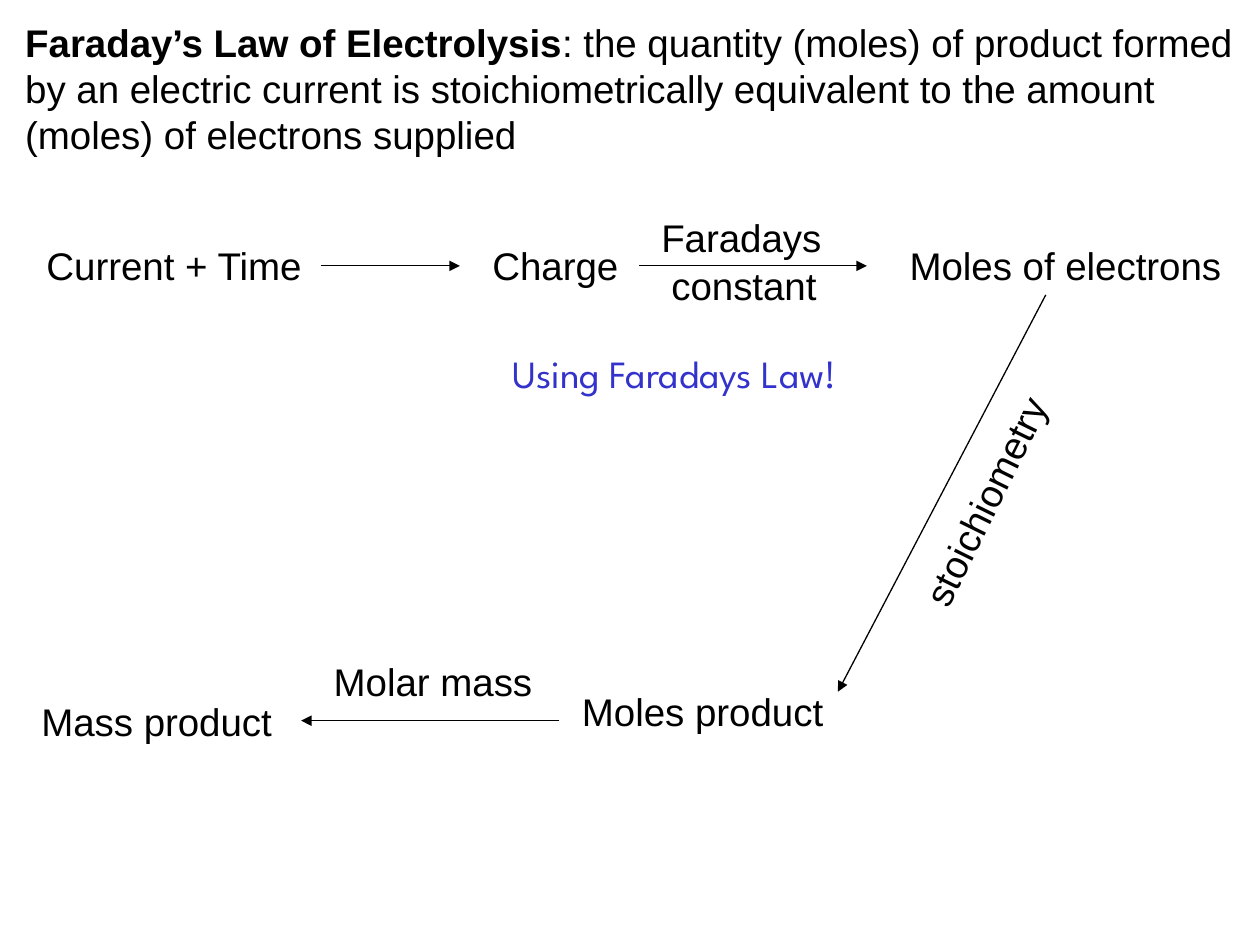
from lxml import etree
from pptx import Presentation
from pptx.dml.color import RGBColor
from pptx.enum.shapes import MSO_CONNECTOR
from pptx.enum.text import MSO_ANCHOR, MSO_AUTO_SIZE, PP_ALIGN
from pptx.oxml.ns import qn
from pptx.util import Inches, Pt

STRAIGHT = MSO_CONNECTOR.STRAIGHT
TOP = MSO_ANCHOR.TOP
LEFT = PP_ALIGN.LEFT
NO_FIT = MSO_AUTO_SIZE.NONE
COLORS = {"text": "000000", "accent": "3333CC"}
TITLE_ONLY = 5
WIDTH, HEIGHT = 10, 7.5
LABEL_HEIGHT = 0.47
TOP_ROW = 1.87
STEPS = [
    ("Current + Time", 0.27, TOP_ROW, 2.25),
    ("Charge", 3.81, TOP_ROW, 1.2),
    ("Moles of electrons", 7.12, TOP_ROW, 2.68),
    ("Moles product", 4.52, 5.41, 2.12),
    ("Mass product", 0.23, 5.49, 2.04),
]
CONVERSIONS = [
    ("Faradays", 5.15, 1.65, 1.48, 0),
    ("constant", 5.23, 2.03, 1.36, 0),
    ("stoichiometry", 6.82, 3.74, 2, 296.3),
    ("Molar mass", 2.55, 5.17, 1.78, 0),
]
ARROWS = [
    (2.55, 2.11, 3.65, 2.11),
    (5.07, 2.11, 6.88, 2.11),
    (8.3, 2.34, 6.65, 5.49),
    (4.44, 5.72, 2.39, 5.72),
]


def place(sp, x, y, w, h):
    """Position a shape in inches."""
    sp.left, sp.top, sp.width, sp.height = map(Inches, (x, y, w, h))


def style(p, font="Arial", color="text"):
    """Set the font of a paragraph."""
    p.alignment = LEFT
    p.font.name = font
    p.font.size = Pt(22)
    p.font.color.rgb = RGBColor.from_string(COLORS[color])


def set_title(s, term, definition):
    """Fill the title with a bold term and its definition."""
    sp = s.shapes.title
    place(sp, 0.1, 0.1, WIDTH - 0.1, 1.2)
    tf = sp.text_frame
    tf.word_wrap = True
    tf.auto_size = NO_FIT
    tf.vertical_anchor = TOP
    p = tf.paragraphs[0]
    style(p)
    r = p.add_run()
    r.text = term
    r.font.bold = True
    p.add_run().text = definition


def add_label(s, text, x, y, w, rotation=0, wrap=False, **look):
    """Add a one-line label."""
    sp = s.shapes.add_textbox(*map(Inches, (x, y, w, LABEL_HEIGHT)))
    sp.rotation = rotation
    tf = sp.text_frame
    tf.word_wrap = wrap
    p = tf.paragraphs[0]
    p.text = text
    style(p, **look)


def add_arrow(s, x1, y1, x2, y2):
    """Add a thin arrow that points at its end."""
    sp = s.shapes.add_connector(STRAIGHT, *map(Inches, (x1, y1, x2, y2)))
    sp.line.width = Pt(0.75)
    sp.line.color.rgb = RGBColor.from_string(COLORS["text"])
    ln = sp.line._get_or_add_ln()
    etree.SubElement(ln, qn("a:tailEnd"), type="triangle")
    etree.SubElement(sp._element.spPr, qn("a:effectLst"))


def main():
    """Build the slide on Faraday's law."""
    prs = Presentation()
    prs.slide_width, prs.slide_height = Inches(WIDTH), Inches(HEIGHT)
    s = prs.slides.add_slide(prs.slide_layouts[TITLE_ONLY])
    set_title(
        s,
        "Faraday’s Law of Electrolysis",
        ": the quantity (moles) of product formed by an electric current is "
        "stoichiometrically equivalent to the amount (moles) of electrons supplied",
    )
    for label in STEPS + CONVERSIONS:
        add_label(s, *label)
    for arrow in ARROWS:
        add_arrow(s, *arrow)
    add_label(s, "Using Faradays Law!", 3.97, 2.73, 3.62, wrap=True,
              font="League Spartan", color="accent")
    prs.save("out.pptx")


if __name__ == "__main__":
    main()
